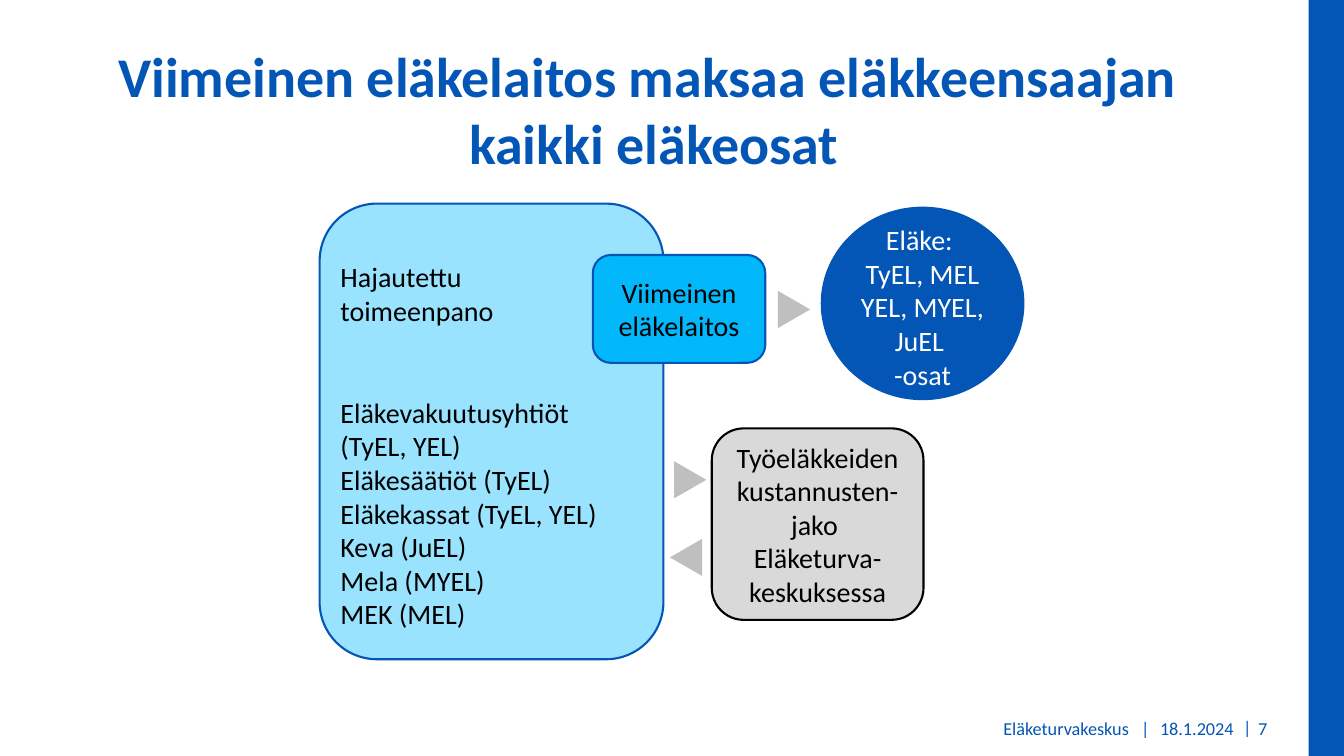
from dataclasses import dataclass

from pptx import Presentation
from pptx.dml.color import RGBColor
from pptx.enum.shapes import MSO_SHAPE as Preset
from pptx.enum.text import MSO_ANCHOR as Anchor, PP_ALIGN as Align
from pptx.util import Inches, Pt


@dataclass(frozen=True)
class Theme:
    font: str = "Calibri"
    blue: str = "0356B5"
    sky: str = "02B7FA"
    pale: str = "99E3FE"
    grey: str = "D9D9D9"
    arrow: str = "BFBFBF"
    black: str = "000000"
    white: str = "FFFFFF"
    title: int = 40
    body: int = 20
    footer: int = 13
    outline: float = 1.5


THEME = Theme()


def color(value):
    return RGBColor.from_string(value)


def add_run(paragraph, text, size, ink, bold=False):
    run = paragraph.add_run()
    run.text = text
    run.font.name = THEME.font
    run.font.size = Pt(size)
    run.font.bold = bold
    run.font.color.rgb = color(ink)


def write(shape, lines, size=THEME.body, ink=THEME.black, align=Align.CENTER,
          anchor=Anchor.MIDDLE, insets=(0.1, 0.05, 0.1, 0.05), wrap=True):
    frame = shape.text_frame
    frame.word_wrap = wrap
    frame.vertical_anchor = anchor
    (frame.margin_left, frame.margin_top,
     frame.margin_right, frame.margin_bottom) = map(Inches, insets)
    for index, line in enumerate(lines):
        paragraph = frame.add_paragraph() if index else frame.paragraphs[0]
        paragraph.alignment = align
        add_run(paragraph, line, size, ink)
    return frame


def add_shape(slide, preset, box, fill, outline=None):
    shape = slide.shapes.add_shape(preset, *map(Inches, box))
    shape.shadow.inherit = False
    shape.fill.solid()
    shape.fill.fore_color.rgb = color(fill)
    if outline:
        shape.line.color.rgb = color(outline)
        shape.line.width = Pt(THEME.outline)
    else:
        shape.line.fill.background()
    return shape


def add_text(slide, box, lines, **style):
    return write(slide.shapes.add_textbox(*map(Inches, box)), lines, **style)


# Title
def add_title(slide, box):
    title = slide.shapes.title
    title.left, title.top, title.width, title.height = map(Inches, box)
    paragraph = title.text_frame.paragraphs[0]
    paragraph.alignment = Align.CENTER
    add_run(paragraph, "Viimeinen eläkelaitos maksaa eläkkeensaajan ",
            THEME.title, THEME.blue, bold=True)
    paragraph.add_line_break()
    add_run(paragraph, "kaikki eläkeosat", THEME.title, THEME.blue, bold=True)


# Footer: organisation, date and page number in one row
def add_footer(slide, box):
    left, top, _, height = box
    style = {"size": THEME.footer, "ink": THEME.blue}
    add_text(slide, (left, top, 6.61, height), ["Eläketurvakeskus   |"],
             align=Align.RIGHT, insets=(0.04, 0.05, 0.08, 0.05), **style)
    add_text(slide, (left + 6.52, top, 0.96, height), ["18.1.2024"],
             insets=(0, 0.05, 0, 0.05), **style)
    add_text(slide, (left + 7.36, top + 0.01, 0.29, height), ["|"],
             align=Align.LEFT, anchor=Anchor.TOP, wrap=False, **style)
    add_text(slide, (left + 7.51, top, 0.44, height), ["7"],
             align=Align.LEFT, **style)


# Pension providers
def add_providers(slide, box):
    panel = add_shape(slide, Preset.ROUNDED_RECTANGLE, box, THEME.pale, THEME.blue)
    frame = write(panel, [
        "Hajautettu", "toimeenpano",
        "Eläkevakuutusyhtiöt", "(TyEL, YEL)", "Eläkesäätiöt (TyEL)",
        "Eläkekassat (TyEL, YEL)", "Keva (JuEL)", "Mela (MYEL)", "MEK (MEL)",
    ], align=Align.LEFT, anchor=Anchor.TOP, insets=(0.04, 0.39, 0.04, 0.05))
    frame.paragraphs[2].space_before = Pt(48.8)


def add_last_provider(slide, box):
    panel = add_shape(slide, Preset.ROUNDED_RECTANGLE, box, THEME.sky, THEME.blue)
    write(panel, ["Viimeinen", "eläkelaitos"])


# Pension paid out
def add_pension(slide, box):
    left, top, width, height = box
    add_shape(slide, Preset.OVAL, box, THEME.blue)
    add_text(slide, (left - 0.02, top + 0.11, width + 0.04, height - 0.14),
             ["Eläke: ", "TyEL, MEL", "YEL, MYEL,", "JuEL ", "-osat"],
             ink=THEME.white, anchor=Anchor.TOP)


# Cost sharing
def add_cost_sharing(slide, box):
    panel = add_shape(slide, Preset.ROUNDED_RECTANGLE, box, THEME.grey, THEME.black)
    write(panel, ["Työeläkkeiden kustannusten-", "jako ",
                  "Eläketurva-keskuksessa"], insets=(0, 0.05, 0, 0.05))


# Triangles showing the direction of payments
def add_arrow(slide, left, top, rotation):
    arrow = add_shape(slide, Preset.FLOWCHART_MERGE, (left, top, 0.37, 0.32),
                      THEME.arrow)
    arrow.rotation = rotation


def add_diagram(slide, box):
    left, top, _, height = box
    add_providers(slide, (left, top, 3.41, height))
    add_last_provider(slide, (left + 2.71, top + 0.51, 1.71, 1.07))
    add_pension(slide, (left + 4.97, top + 0.03, 2.02, 1.92))
    add_cost_sharing(slide, (left + 3.89, top + 2.23, 2.1, 1.9))
    for x, y, rotation in ((4.52, 0.89, 270), (3.49, 2.58, 270), (3.45, 3.35, 90)):
        add_arrow(slide, left + x, top + y, rotation)


def main():
    presentation = Presentation()
    presentation.slide_width = Inches(13.33)
    presentation.slide_height = Inches(7.5)
    slide = presentation.slides.add_slide(presentation.slide_layouts[5])
    add_shape(slide, Preset.RECTANGLE, (12.98, 0, 0.35, 7.5), THEME.blue)
    add_title(slide, (0, 0.35, 12.97, 1.46))
    add_diagram(slide, (3.17, 2.02, 6.99, 4.52))
    add_footer(slide, (4.87, 7.05, 7.95, 0.35))
    presentation.save("out.pptx")


if __name__ == "__main__":
    main()
